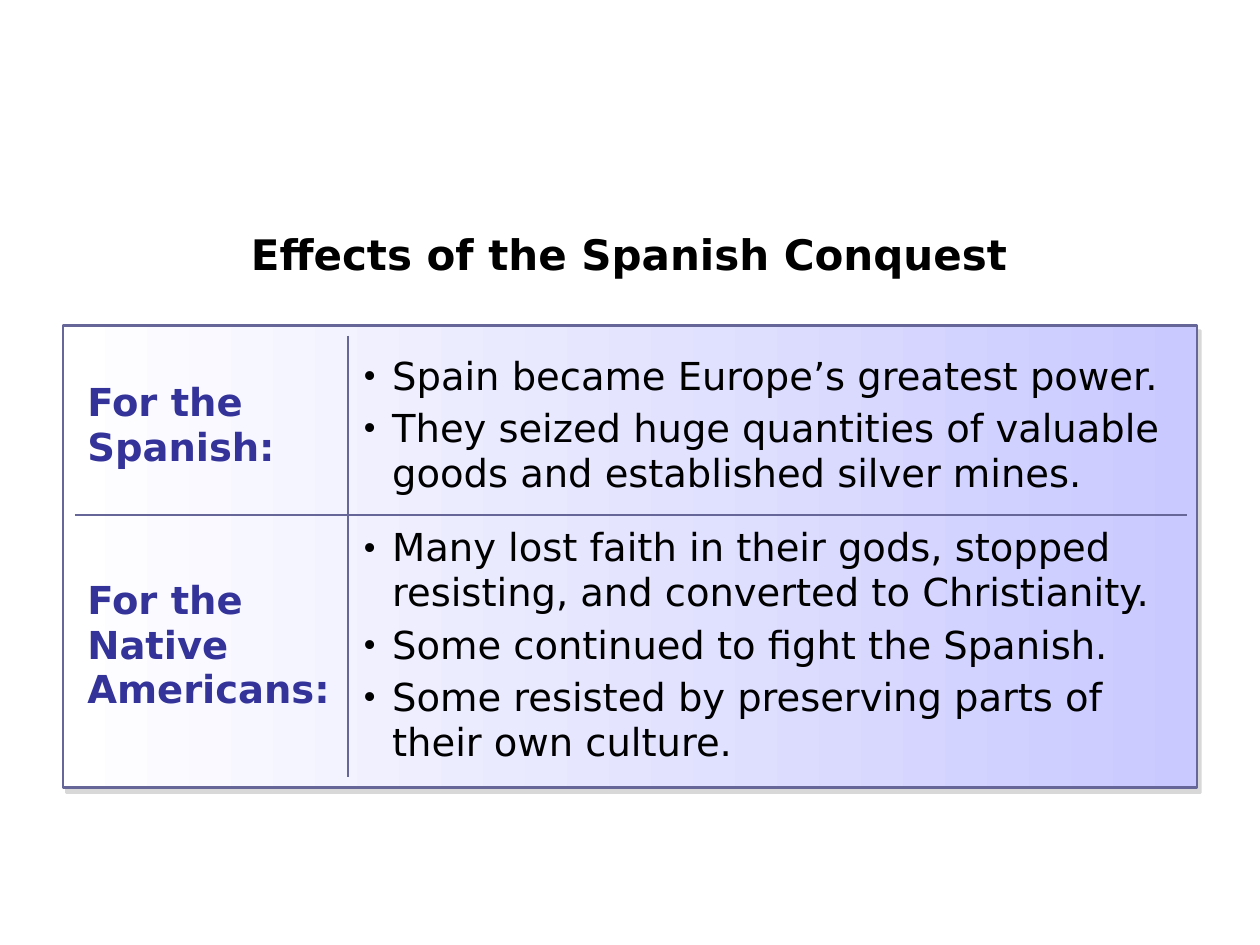
"""Build the slide on the effects of the Spanish conquest."""
from dataclasses import dataclass

from lxml import etree
from pptx import Presentation
from pptx.dml.color import RGBColor
from pptx.enum.shapes import MSO_SHAPE
from pptx.enum.text import MSO_ANCHOR, PP_ALIGN
from pptx.oxml.ns import qn
from pptx.util import Pt

RECTANGLE = MSO_SHAPE.RECTANGLE
TOP, MIDDLE = MSO_ANCHOR.TOP, MSO_ANCHOR.MIDDLE
CENTER, LEFT = PP_ALIGN.CENTER, PP_ALIGN.LEFT


@dataclass(frozen=True)
class Theme:
    """Colours, font and sizes of the slide."""

    font: str = "DejaVu Sans"
    text: str = "000000"
    label: str = "333399"
    rule: str = "666699"
    panel_start: str = "FFFFFF"
    panel_end: str = "C9C9FF"
    shadow: str = "B2B2B2"
    title_size: float = 24
    body_size: float = 22
    panel_line: float = 1.5
    table_rule: float = 1
    paragraph_gap: float = 4.4
    bullet_indent: float = 18


THEME = Theme()
TITLE = "Effects of the Spanish Conquest"
EFFECTS = [
    ("For the Spanish:", [
        "Spain became Europe’s greatest power.",
        "They seized huge quantities of valuable goods and established silver mines.",
    ]),
    ("For the Native Americans:", [
        "Many lost faith in their gods, stopped resisting, and converted to Christianity.",
        "Some continued to fight the Spanish.",
        "Some resisted by preserving parts of their own culture.",
    ]),
]


def add_element(parent, tag, **attributes):
    """Append a DrawingML element and return it."""
    element = etree.SubElement(parent, qn(tag))
    for name, value in attributes.items():
        element.set(name, str(value))
    return element


def add_run(paragraph, text, size, color, bold):
    """Add one formatted run to a paragraph."""
    run = paragraph.add_run()
    run.text = text
    run.font.name = THEME.font
    run.font.size = Pt(size)
    run.font.bold = bold
    run.font.color.rgb = RGBColor.from_string(color)


def add_panel(slide):
    """Add the shaded panel with its hard shadow."""
    panel = slide.shapes.add_shape(RECTANGLE, Pt(36), Pt(186), Pt(648), Pt(264))
    panel.fill.gradient()
    panel.fill.gradient_angle = 0
    for stop, color in zip(panel.fill.gradient_stops, (THEME.panel_start, THEME.panel_end)):
        stop.color.rgb = RGBColor.from_string(color)
    panel.line.color.rgb = RGBColor.from_string(THEME.rule)
    panel.line.width = Pt(THEME.panel_line)
    panel.shadow.inherit = False
    effects = panel._element.spPr.find(qn("a:effectLst"))
    shadow = add_element(effects, "a:outerShdw", blurRad=0, dist=Pt(3.6),
                         dir=56 * 60000, algn="ctr", rotWithShape=0)
    color = add_element(shadow, "a:srgbClr", val=THEME.shadow)
    add_element(color, "a:alpha", val=50000)


def add_plain_table(slide, left, top, widths, heights):
    """Add a table without banding and size its columns and rows."""
    table = slide.shapes.add_table(len(heights), len(widths), Pt(left), Pt(top),
                                   Pt(sum(widths)), Pt(sum(heights))).table
    table.first_row = table.horz_banding = False
    for column, width in zip(table.columns, widths):
        column.width = Pt(width)
    for row, height in zip(table.rows, heights):
        row.height = Pt(height)
    return table


def set_borders(cell, visible):
    """Draw the named cell sides and clear the others."""
    properties = cell._tc.get_or_add_tcPr()
    for side in "LRTB":
        line = add_element(properties, f"a:ln{side}", w=Pt(THEME.table_rule))
        if side in visible:
            fill = add_element(line, "a:solidFill")
            add_element(fill, "a:srgbClr", val=THEME.rule)
        else:
            add_element(line, "a:noFill")


def set_bullet(paragraph):
    """Give a paragraph a small hanging bullet."""
    properties = paragraph._p.get_or_add_pPr()
    properties.set("marL", str(Pt(THEME.bullet_indent)))
    properties.set("indent", str(-Pt(THEME.bullet_indent)))
    add_element(properties, "a:buSzPct", val=80000)
    add_element(properties, "a:buFont", typeface=THEME.font)
    add_element(properties, "a:buChar", char="•")


def fill_cell(cell, texts, color, borders="", size=THEME.body_size, bold=False,
              bulleted=False, anchor=MIDDLE, alignment=LEFT):
    """Write paragraphs into a transparent cell with the given borders."""
    set_borders(cell, borders)
    cell.fill.background()
    cell.vertical_anchor = anchor
    frame = cell.text_frame
    for index, text in enumerate(texts):
        paragraph = frame.add_paragraph() if index else frame.paragraphs[0]
        paragraph.alignment = alignment
        paragraph.space_before = Pt(THEME.paragraph_gap if index else 0)
        if bulleted:
            set_bullet(paragraph)
        add_run(paragraph, text, size, color, bold)


def add_title_table(slide):
    """Add the one-cell table that holds the heading."""
    table = add_plain_table(slide, 38.3, 128.9, [642.2], [41.8])
    fill_cell(table.cell(0, 0), [TITLE], THEME.text, size=THEME.title_size,
              bold=True, anchor=TOP, alignment=CENTER)


def add_effects_table(slide):
    """Add the table of effects with its inner rules."""
    table = add_plain_table(slide, 42.75, 191.95, [156.2, 479.5], [102.2, 149.8])
    for row, row_side, (label, effects) in zip(table.rows, "BT", EFFECTS):
        label_cell, effects_cell = row.cells
        fill_cell(label_cell, [label], THEME.label, "R" + row_side, bold=True)
        fill_cell(effects_cell, effects, THEME.text, "L" + row_side, bulleted=True)


def main():
    """Build and save the presentation."""
    presentation = Presentation()
    presentation.slide_width, presentation.slide_height = Pt(720), Pt(540)
    slide = presentation.slides.add_slide(presentation.slide_layouts.get_by_name("Blank"))
    add_panel(slide)
    add_title_table(slide)
    add_effects_table(slide)
    presentation.save("out.pptx")


if __name__ == "__main__":
    main()
